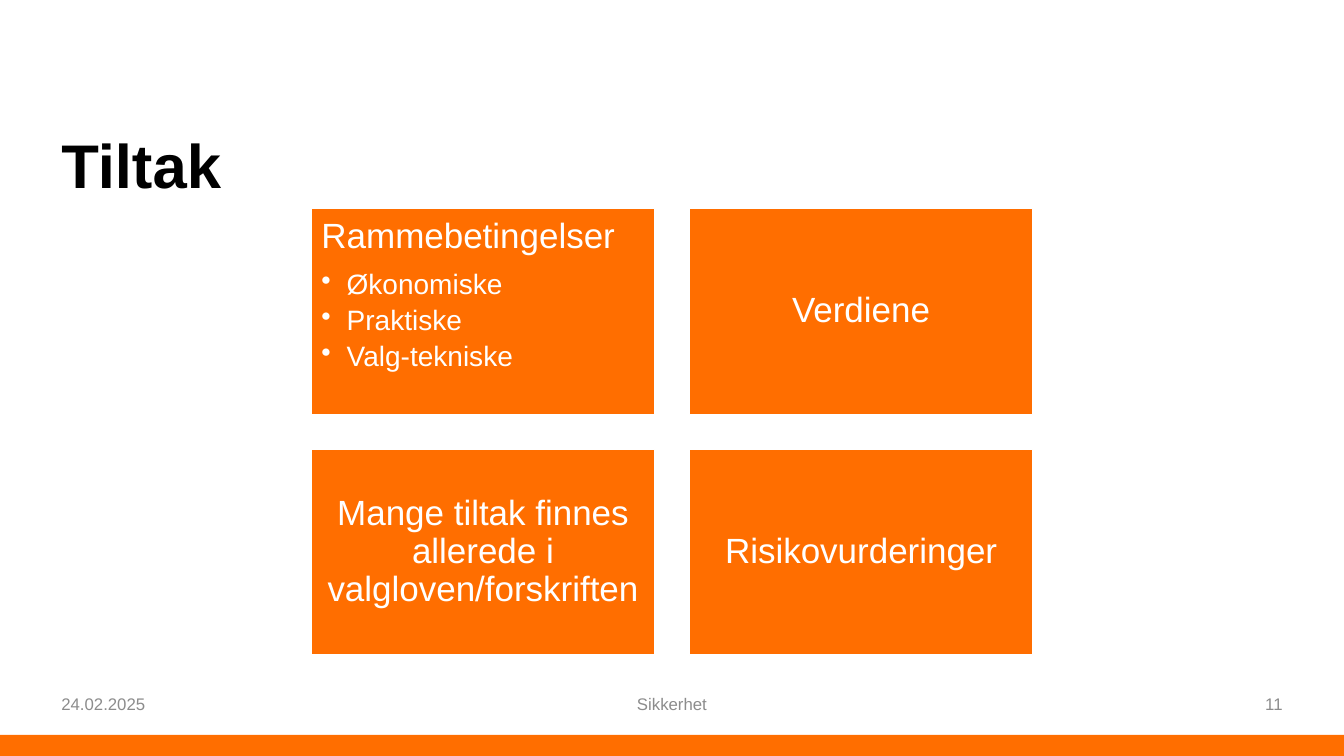
from lxml import etree
from pptx import Presentation
from pptx.dml.color import RGBColor
from pptx.enum.shapes import MSO_SHAPE
from pptx.enum.text import MSO_ANCHOR, PP_ALIGN
from pptx.oxml.ns import qn
from pptx.util import Inches, Pt

ORANGE = RGBColor(0xFF, 0x6E, 0x00)
WHITE = RGBColor(0xFF, 0xFF, 0xFF)
BLACK = RGBColor(0x00, 0x00, 0x00)
GRAY = RGBColor(0x8C, 0x8C, 0x8C)
RECTANGLE = MSO_SHAPE.RECTANGLE
LEFT, CENTER, RIGHT = PP_ALIGN.LEFT, PP_ALIGN.CENTER, PP_ALIGN.RIGHT
TOP, MIDDLE = MSO_ANCHOR.TOP, MSO_ANCHOR.MIDDLE

FONT = "Arial"
SLIDE_WIDTH, SLIDE_HEIGHT = 13.33, 7.5
BAR_HEIGHT = 0.21
MARGIN = 0.51
CONTENT_WIDTH = SLIDE_WIDTH - 2 * MARGIN
CARD_WIDTH, CARD_HEIGHT, CARD_GAP = 3.4, 2.04, 0.35
GRID_LEFT = (SLIDE_WIDTH - 2 * CARD_WIDTH - CARD_GAP) / 2
GRID_TOP = 2.07
FOOTER_TOP, FOOTER_HEIGHT = 6.78, 0.4
INDENT = 0.25

FRAMEWORK = ("Rammebetingelser", "Økonomiske", "Praktiske", "Valg-tekniske")
CARDS = (
    (FRAMEWORK, ("Verdiene",)),
    (("Mange tiltak finnes allerede i valgloven/forskriften",), ("Risikovurderinger",)),
)
FOOTERS = (
    ("24.02.2025", 3, 0, LEFT),
    ("Sikkerhet", 4.5, 0.5, CENTER),
    ("11", 3, 1, RIGHT),
)


def add_bullet(paragraph):
    properties = paragraph._p.get_or_add_pPr()
    properties.set("marL", str(Inches(INDENT)))
    properties.set("indent", str(Inches(-INDENT)))
    etree.SubElement(properties, qn("a:buChar")).set("char", "•")


def write_text(paragraph, text, size, color, align=LEFT, bold=False,
               line_spacing=1.0, after=0, bullet=False):
    if bullet:
        add_bullet(paragraph)
    paragraph.alignment = align
    paragraph.line_spacing = line_spacing
    paragraph.space_after = Pt(after)
    run = paragraph.add_run()
    run.text = text
    run.font.name = FONT
    run.font.size = Pt(size)
    run.font.bold = bold
    run.font.color.rgb = color


def add_label(slide, text, left, top, width, height, **text_format):
    box = slide.shapes.add_textbox(*map(Inches, (left, top, width, height)))
    frame = box.text_frame
    frame.word_wrap = True
    frame.vertical_anchor = MIDDLE
    write_text(frame.paragraphs[0], text, **text_format)


def add_block(slide, left, top, width, height):
    block = slide.shapes.add_shape(RECTANGLE, *map(Inches, (left, top, width, height)))
    block.shadow.inherit = False
    block.fill.solid()
    block.fill.fore_color.rgb = ORANGE
    block.line.fill.background()
    return block


def add_card(slide, column, row, heading, *points):
    card = add_block(slide, GRID_LEFT + column * (CARD_WIDTH + CARD_GAP),
                     GRID_TOP + row * (CARD_HEIGHT + CARD_GAP), CARD_WIDTH, CARD_HEIGHT)
    card.line.color.rgb = WHITE
    card.line.width = Pt(1)
    frame = card.text_frame
    frame.word_wrap = True
    frame.margin_left = frame.margin_right = Inches(0.1)
    frame.margin_top = frame.margin_bottom = Inches(0.1)
    frame.vertical_anchor = TOP if points else MIDDLE
    write_text(frame.paragraphs[0], heading, 25, WHITE, line_spacing=0.9,
               align=LEFT if points else CENTER, after=10 if points else 0)
    for point in points:
        write_text(frame.add_paragraph(), point, 20, WHITE,
                   line_spacing=0.9, after=4, bullet=True)


def add_footers(slide):
    for text, width, share, align in FOOTERS:
        left = MARGIN + share * (CONTENT_WIDTH - width)
        add_label(slide, text, left, FOOTER_TOP, width, FOOTER_HEIGHT,
                  size=12, color=GRAY, align=align)


def main():
    deck = Presentation()
    deck.slide_width, deck.slide_height = Inches(SLIDE_WIDTH), Inches(SLIDE_HEIGHT)
    slide = deck.slides.add_slide(deck.slide_layouts[6])
    add_block(slide, 0, SLIDE_HEIGHT - BAR_HEIGHT, SLIDE_WIDTH, BAR_HEIGHT)
    add_label(slide, "Tiltak", MARGIN, 0.95, CONTENT_WIDTH, 1.45,
              size=44, color=BLACK, bold=True, line_spacing=0.9)
    for row, cards in enumerate(CARDS):
        for column, texts in enumerate(cards):
            add_card(slide, column, row, *texts)
    add_footers(slide)
    deck.save("out.pptx")


if __name__ == "__main__":
    main()
